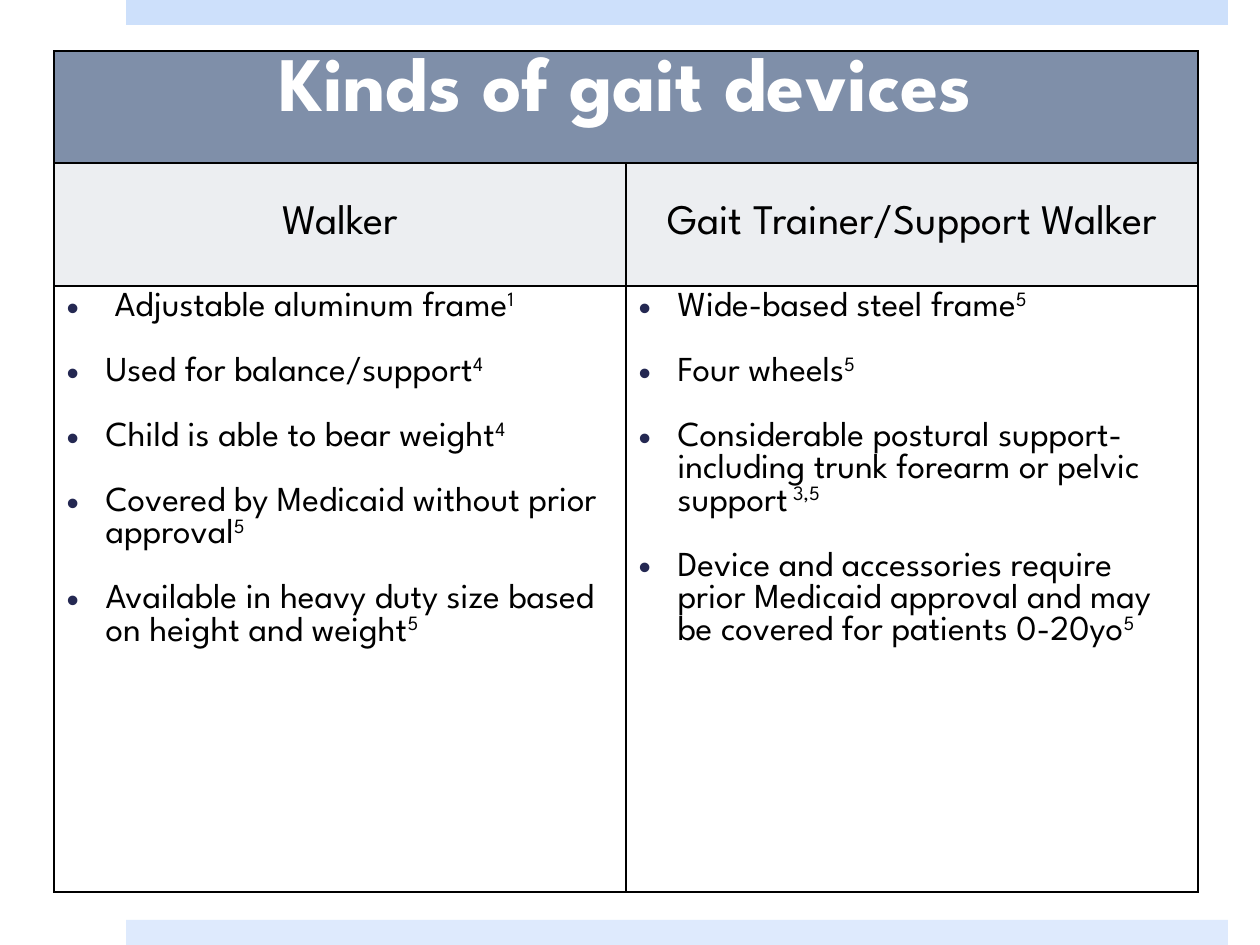
from dataclasses import dataclass

import pptx
import pptx.dml.color
import pptx.enum.shapes
import pptx.enum.text
import pptx.oxml
import pptx.oxml.ns
import pptx.util

RGBColor = pptx.dml.color.RGBColor
Align = pptx.enum.text.PP_ALIGN
Anchor = pptx.enum.text.MSO_ANCHOR

PX = 914400 / 126
FONT = "League Spartan"
BLACK = RGBColor(0x00, 0x00, 0x00)
WHITE = RGBColor(0xFF, 0xFF, 0xFF)
SLATE = RGBColor(0x7F, 0x8F, 0xA9)
PALE_GREY = RGBColor(0xEC, 0xEE, 0xF1)
NAVY = RGBColor(0x24, 0x28, 0x52)
TOP_BLUE = RGBColor(0xCD, 0xE0, 0xFB)
BOTTOM_BLUE = RGBColor(0xDE, 0xEA, 0xFD)

COLUMN_WIDTH = 572
ROW_HEIGHTS = (112, 123, 606)


@dataclass(frozen=True)
class Band:
    top: int
    color: RGBColor


@dataclass(frozen=True)
class Feature:
    text: str
    reference: str
    indent: int = 39


@dataclass(frozen=True)
class Device:
    name: str
    features: tuple[Feature, ...]


BANDS = (Band(0, TOP_BLUE), Band(920, BOTTOM_BLUE))
DEVICES = (
    Device("Walker", (
        Feature("Adjustable aluminum frame", "1", indent=48),
        Feature("Used for balance/support", "4"),
        Feature("Child is able to bear weight", "4"),
        Feature("Covered by Medicaid without prior approval", "5"),
        Feature("Available in heavy duty size based on height and weight", "5"),
    )),
    Device("Gait Trainer/Support Walker", (
        Feature("Wide-based steel frame", "5"),
        Feature("Four wheels", "5"),
        Feature("Considerable postural support- including trunk forearm or pelvic support", " 3,5"),
        Feature("Device and accessories require prior Medicaid approval and may be covered "
                "for patients 0-20yo", "5"),
    )),
)


def px(length: int) -> pptx.util.Emu:
    return pptx.util.Emu(round(length * PX))


def add_text(paragraph, text: str, *, size: int = 20, color: RGBColor = BLACK,
             bold: bool = False, superscript: bool = False) -> None:
    run = paragraph.add_run()
    run.text = text
    run.font.name = FONT
    run.font.size = pptx.util.Pt(size)
    run.font.bold = bold
    run.font.color.rgb = color
    if superscript:
        run.font._element.set("baseline", "30000")


def add_band(slide, band: Band) -> None:
    shape = slide.shapes.add_shape(pptx.enum.shapes.MSO_SHAPE.RECTANGLE,
                                   px(126), px(band.top), px(1102), px(25))
    shape.shadow.inherit = False
    shape.fill.solid()
    shape.fill.fore_color.rgb = band.color
    shape.line.fill.background()


def format_cell(cell, fill: RGBColor) -> None:
    """Give the cell black 1 pt borders and a plain fill."""
    properties = cell._tc.get_or_add_tcPr()
    for side in ("lnL", "lnR", "lnT", "lnB"):
        properties.append(pptx.oxml.parse_xml(
            f'<a:{side} {pptx.oxml.ns.nsdecls("a")} w="12700"><a:solidFill>'
            f'<a:srgbClr val="{BLACK}"/></a:solidFill></a:{side}>'))
    cell.fill.solid()
    cell.fill.fore_color.rgb = fill


def add_bullet(paragraph, indent: int) -> None:
    properties = paragraph._p.get_or_add_pPr()
    properties.set("marL", str(px(indent)))
    properties.set("indent", str(-px(indent)))
    namespace = pptx.oxml.ns.nsdecls("a")
    for xml in (f'<a:buClr {namespace}><a:srgbClr val="{NAVY}"/></a:buClr>',
                f'<a:buFont {namespace} typeface="Arial"/>',
                f'<a:buChar {namespace} char="•"/>'):
        properties.append(pptx.oxml.parse_xml(xml))


def fill_features(cell, features: tuple[Feature, ...]) -> None:
    frame = cell.text_frame
    for index, feature in enumerate(features):
        paragraph = frame.add_paragraph() if index else frame.paragraphs[0]
        paragraph.space_after = pptx.util.Pt(18.5)
        add_bullet(paragraph, feature.indent)
        add_text(paragraph, feature.text)
        add_text(paragraph, feature.reference, superscript=True)


def fill_heading(cell, text: str, **text_format) -> None:
    paragraph = cell.text_frame.paragraphs[0]
    paragraph.alignment = Align.CENTER
    add_text(paragraph, text, **text_format)


def add_device_table(slide) -> None:
    table = slide.shapes.add_table(
        len(ROW_HEIGHTS), len(DEVICES), px(54), px(51),
        px(COLUMN_WIDTH * len(DEVICES)), px(sum(ROW_HEIGHTS))).table
    table.first_row = False
    table.horz_banding = False
    for column in table.columns:
        column.width = px(COLUMN_WIDTH)
    for row, height, fill in zip(table.rows, ROW_HEIGHTS, (SLATE, PALE_GREY, WHITE)):
        row.height = px(height)
        for cell in row.cells:
            format_cell(cell, fill)

    table.cell(0, 0).merge(table.cell(0, len(DEVICES) - 1))
    fill_heading(table.cell(0, 0), "Kinds of gait devices", size=44, color=WHITE, bold=True)
    for index, device in enumerate(DEVICES):
        name_cell = table.cell(1, index)
        name_cell.vertical_anchor = Anchor.MIDDLE
        fill_heading(name_cell, device.name, size=24)
        fill_features(table.cell(2, index), device.features)


def main() -> None:
    presentation = pptx.Presentation()
    presentation.slide_width = pptx.util.Inches(10)
    presentation.slide_height = pptx.util.Inches(7.5)
    slide = presentation.slides.add_slide(presentation.slide_layouts[6])
    for band in BANDS:
        add_band(slide, band)
    add_device_table(slide)
    presentation.save("out.pptx")


if __name__ == "__main__":
    main()
